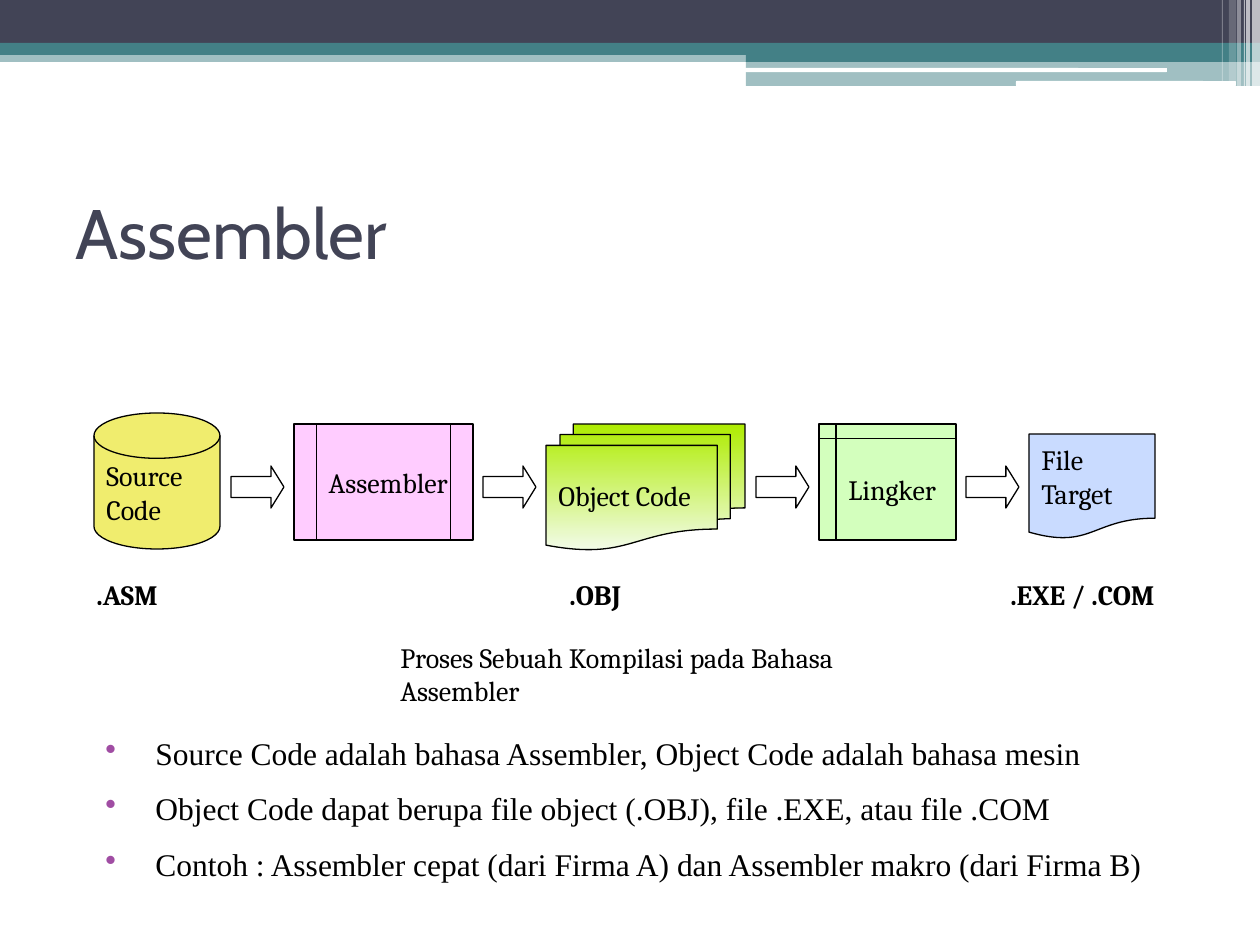
from lxml.etree import SubElement
from pptx import Presentation
from pptx.dml.color import RGBColor
from pptx.enum.shapes import MSO_SHAPE as Kind
from pptx.enum.text import MSO_ANCHOR, MSO_AUTO_SIZE, PP_ALIGN
from pptx.oxml.ns import qn
from pptx.util import Pt

SCALE = 914400 / 126  # EMU in one px
BLACK, WHITE, TEAL, SLATE = "000000", "FFFFFF", "438086", "424456"
SERIF = "Cambria"

# Header bars: left, top, width, height, colour, opacity
BARS = [
    (0, 50, 1260, 12, TEAL, 50),
    (0, 0, 1260, 43, SLATE, 100),
    (0, 43, 1260, 12, TEAL, 100),
    (746, 49, 514, 13, TEAL, 100),
    (746, 61, 514, 25, TEAL, 50),
]
LINES = [(745, 68, 422, 4), (1016, 81, 220, 5)]
# White stripes at the right: left, width, height, opacity
STRIPES = [(1252, 8, 86, 65), (1246, 4, 86, 65), (1244, 1, 86, 60),
           (1237, 4, 86, 40), (1229, 7, 81, 20), (1222, 1, 81, 30)]

# Steps: kind, box, colour, opacity, lines of text
STEPS = [
    (Kind.FLOWCHART_MAGNETIC_DISK, (94, 413, 126, 136), "E5E000", 57,
     ["Source", "Code"]),
    (Kind.FLOWCHART_PREDEFINED_PROCESS, (294, 424, 179, 116), "FFCCFF", 100,
     ["Assembler"]),
    (Kind.FLOWCHART_INTERNAL_STORAGE, (819, 424, 137, 116), "99FF66", 43,
     ["Lingker"]),
    (Kind.FLOWCHART_DOCUMENT, (1029, 434, 126, 105), "6699FF", 35,
     ["File", "Target"]),
]
ARROWS = [231, 483, 756, 966]
LABELS = [(84, 147, ".ASM"), (557, 147, ".OBJ"), (998, 200, ".EXE / .COM")]
POINTS = [
    "Source Code adalah bahasa Assembler, Object Code adalah bahasa mesin",
    "Object Code dapat berupa file object (.OBJ), file .EXE, atau file .COM",
    "Contoh : Assembler cepat (dari Firma A) dan Assembler makro (dari Firma B)",
]


def px(num):
    return round(num * SCALE)


def place(box):
    return [px(num) for num in box]


def tint(color, code):
    color.rgb = RGBColor.from_string(code)


def paint(shape, code, alpha=100):
    shape.fill.solid()
    tint(shape.fill.fore_color, code)
    if alpha < 100:
        node = shape.fill._xPr.find(".//" + qn("a:srgbClr"))
        SubElement(node, qn("a:alpha"), val=str(alpha * 1000))


def write(para, text, size=16, face=SERIF, code=BLACK, bold=False):
    para.alignment = PP_ALIGN.LEFT
    run = para.add_run()
    run.text = text
    run.font.size, run.font.name, run.font.bold = Pt(size), face, bold
    tint(run.font.color, code)


def fill_text(frame, lines, **style):
    for num, line in enumerate(lines):
        para = frame.add_paragraph() if num else frame.paragraphs[0]
        write(para, line, **style)


def add_shape(slide, kind, box, edge=False):
    shape = slide.shapes.add_shape(kind, *place(box))
    shape.shadow.inherit = False
    if edge:
        tint(shape.line.color, BLACK)
        shape.line.width = Pt(0.75)
    else:
        shape.line.fill.background()
    return shape


def add_step(slide, kind, box, lines):
    shape = add_shape(slide, kind, box, True)
    frame = shape.text_frame
    frame.word_wrap = False
    frame.vertical_anchor = MSO_ANCHOR.MIDDLE
    fill_text(frame, lines)
    return shape


def add_text(slide, box, lines, **style):
    frame = slide.shapes.add_textbox(*place(box)).text_frame
    frame.word_wrap = True
    fill_text(frame, lines, **style)
    return frame


def add_arrow(slide, left):
    arrow = add_shape(slide, Kind.RIGHT_ARROW, (left, 466, 53, 42), True)
    arrow.adjustments[1] = 0.31
    arrow.fill.background()


def add_bullet(para):
    props = para._p.get_or_add_pPr()
    props.set("marL", str(px(65)))
    props.set("indent", str(px(-50)))
    color = SubElement(props, qn("a:buClr"))
    SubElement(color, qn("a:srgbClr"), val="A04DA3")
    SubElement(props, qn("a:buChar"), char="•")


def add_header(slide):
    for *box, code, alpha in BARS:
        paint(add_shape(slide, Kind.RECTANGLE, box), code, alpha)
    for box in LINES:
        paint(add_shape(slide, Kind.ROUNDED_RECTANGLE, box), WHITE)
    for left, width, height, alpha in STRIPES:
        box = (left, 0, width, height)
        paint(add_shape(slide, Kind.RECTANGLE, box), WHITE, alpha)


def set_title(slide, text):
    title = slide.shapes.title
    title.left, title.top, title.width, title.height = place(
        (63, 158, 1134, 147))
    frame = title.text_frame
    frame.auto_size = MSO_AUTO_SIZE.NONE
    frame.vertical_anchor = MSO_ANCHOR.MIDDLE
    write(frame.paragraphs[0], text, 40, "Cabin", SLATE)


def add_flow(slide):
    for kind, box, code, alpha, lines in STEPS:
        paint(add_step(slide, kind, box, lines), code, alpha)
    # Stack of object files with a fade from top to bottom
    stack = add_step(slide, Kind.FLOWCHART_MULTIDOCUMENT,
                     (546, 424, 199, 126), ["Object Code"])
    stack.fill.gradient()
    stack.fill.gradient_angle = 270
    for stop, code in zip(stack.fill.gradient_stops, ("AEEC00", "F2FBE8")):
        tint(stop.color, code)
    for left in ARROWS:
        add_arrow(slide, left)


def add_points(slide):
    frame = add_text(slide, (78, 728, 1113, 165), POINTS,
                     size=18, face="Times New Roman")
    for num, para in enumerate(frame.paragraphs):
        if num:
            para.space_before = Pt(10)
        add_bullet(para)


def main():
    deck = Presentation()
    deck.slide_width, deck.slide_height = px(1260), px(945)
    slide = deck.slides.add_slide(deck.slide_layouts[5])
    add_header(slide)
    set_title(slide, "Assembler")
    add_flow(slide)
    # File types and caption
    for left, width, text in LABELS:
        add_text(slide, (left, 571, width, 47), [text], bold=True)
    add_text(slide, (388, 634, 494, 81),
             ["Proses Sebuah Kompilasi pada Bahasa Assembler"])
    add_points(slide)
    deck.save("out.pptx")


if __name__ == "__main__":
    main()
